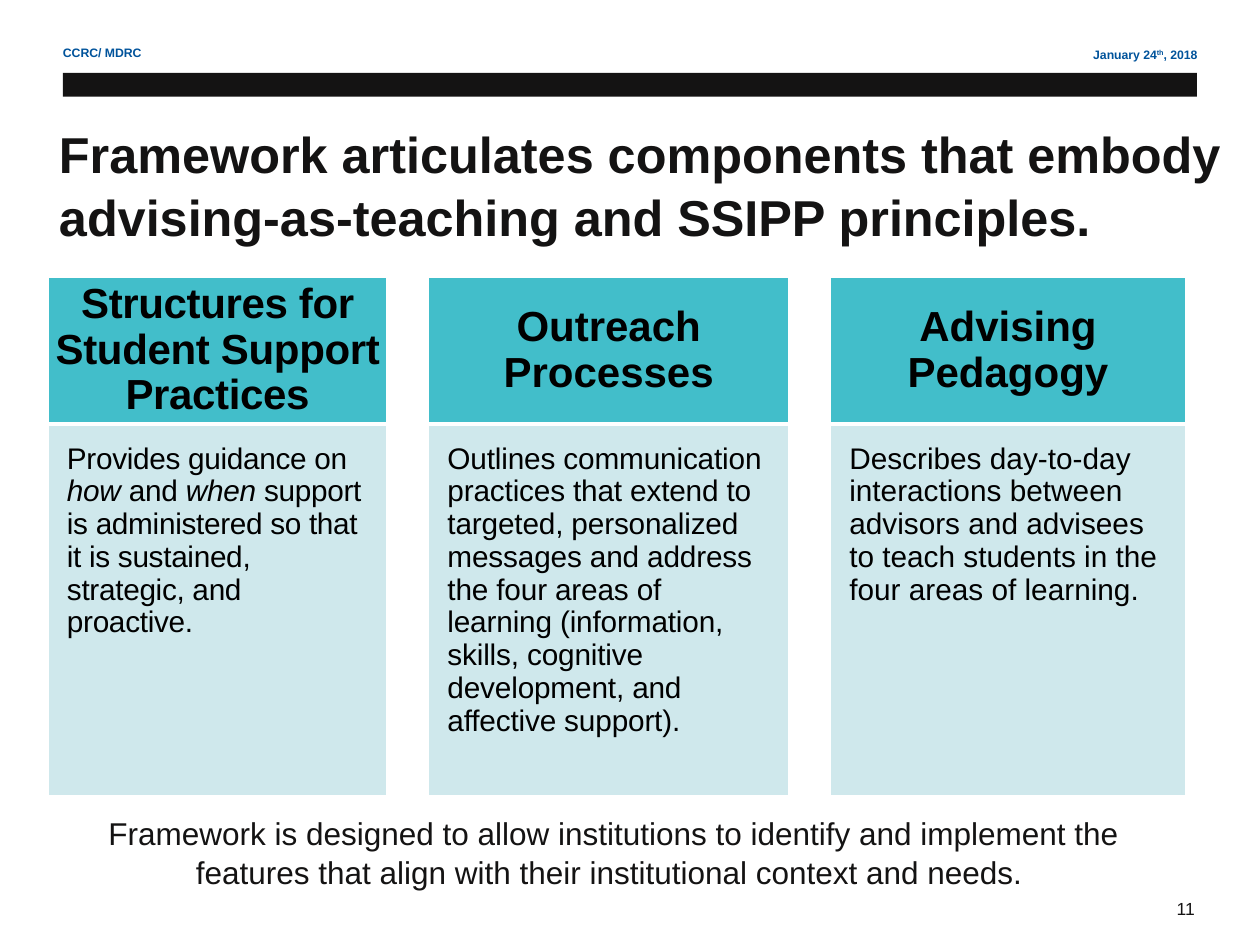
import pptx
import pptx.util
import pptx.dml.color
import pptx.enum.shapes
import pptx.enum.text
import pptx.oxml
import pptx.oxml.ns

Cm, Pt = pptx.util.Cm, pptx.util.Pt
ALIGN = pptx.enum.text.PP_ALIGN
ANCHOR = pptx.enum.text.MSO_ANCHOR

INK, BLUE, TEAL, PALE, WHITE, BLACK = (
    "141313", "00539B", "42BECA", "CFE8EC", "FFFFFF", "000000")

# Content: a run is (text, run properties)
ITALIC = {"i": "1"}
TEXTS = [  # runs, box in cm, size, colour, bold, alignment, anchor, line spacing
    ([("CCRC/ MDRC", {})],
     (1.02, 0.79, 9.04, 0.56), 7, BLUE, True, ALIGN.LEFT, ANCHOR.TOP, 1),
    ([("January 24", {}), ("th", {"baseline": "30000"}), (", 2018", {})],
     (16.31, 0.82, 8.08, 0.56), 7, BLUE, True, ALIGN.RIGHT, ANCHOR.TOP, 1),
    ([("Framework articulates components that embody "
       "advising-as-teaching and SSIPP principles.", {})],
     (0.94, 2.11, 24.26, 3.18), 28.8, INK, True, ALIGN.LEFT, ANCHOR.MIDDLE, 1.04),
    ([("Framework is designed to allow institutions to identify and implement "
       "the features that align with their institutional context and needs. ", {})],
     (0.94, 16.28, 22.86, 1.78), 18, INK, False, ALIGN.CENTER, ANCHOR.TOP, 1.02),
    ([("11", {})],
     (23.47, 17.98, 1.17, 0.69), 10, INK, False, ALIGN.LEFT, ANCHOR.TOP, 1),
]
COMPONENTS = [  # heading, its spacing, description runs, their spacing
    ("Structures for Student Support Practices", -20,
     [("Provides guidance on ", {}), ("how", ITALIC), (" and ", {}),
      ("when", ITALIC),
      (" support is administered so that it is sustained, strategic, "
       "and proactive.", {})], -20),
    ("Outreach Processes", 0,
     [("Outlines communication practices that extend to targeted, personalized "
       "messages and address the four areas of learning (information, skills, "
       "cognitive development, and affective support).", {})], -10),
    ("Advising Pedagogy", 0,
     [("Describes day-to-day interactions between advisors and advisees to "
       "teach students in the four areas of learning.", {})], 0),
]
COL_WIDTHS = [6.83, 0.84, 7.26, 0.84, 7.16]
ROW_HEIGHTS = [2.81, 7.5]


def rgb(value):
    return pptx.dml.color.RGBColor.from_string(value)


def write(tf, runs, size, color, bold, align, spacing, spc=0):
    p = tf.paragraphs[0]
    p.alignment, p.line_spacing = align, spacing
    f = p.font
    f.name, f.size, f.bold = "Arial", Pt(size), bold
    f.color.rgb = rgb(color)
    for text, props in runs:
        r = p.add_run()
        r.text = text
        rPr = r._r.get_or_add_rPr()
        for key, value in props.items():
            rPr.set(key, value)
        if spc:
            rPr.set("spc", str(spc))


def set_borders(cell, bottom):
    tcPr = cell._tc.get_or_add_tcPr()
    for i, (side, width) in enumerate(zip("LRTB", (1, 1, 1, bottom))):
        tcPr.insert(i, pptx.oxml.parse_xml(
            f'<a:ln{side} {pptx.oxml.ns.nsdecls("a")} w="{Pt(width)}">'
            f'<a:solidFill><a:srgbClr val="{WHITE}"/></a:solidFill></a:ln{side}>'))


def style_cell(cell, margin, anchor, fill):
    cell.margin_left = cell.margin_right = Cm(margin)
    cell.margin_top = cell.margin_bottom = Cm(margin)
    cell.vertical_anchor = anchor
    cell.fill.solid()
    cell.fill.fore_color.rgb = rgb(fill)


prs = pptx.Presentation()
prs.slide_width, prs.slide_height = Cm(25.4), Cm(19.05)
s = prs.slides.add_slide(prs.slide_layouts[6])

# Header bar
sp = s.shapes.add_shape(pptx.enum.shapes.MSO_SHAPE.RECTANGLE,
                        Cm(1.27), Cm(1.47), Cm(22.86), Cm(0.48))
sp.shadow.inherit = False
sp.fill.solid()
sp.fill.fore_color.rgb = rgb(INK)
sp.line.fill.background()

# Header, title, closing line and page number
for runs, box, size, color, bold, align, anchor, spacing in TEXTS:
    tf = s.shapes.add_textbox(*map(Cm, box)).text_frame
    tf.word_wrap = True
    tf.vertical_anchor = anchor
    write(tf, runs, size, color, bold, align, spacing)

# Component table, with narrow empty columns as gaps
table = s.shapes.add_table(
    len(ROW_HEIGHTS), len(COL_WIDTHS), Cm(0.97), Cm(5.59),
    Cm(sum(COL_WIDTHS)), Cm(sum(ROW_HEIGHTS))).table
table.first_row = table.horz_banding = False
for col, width in zip(table.columns, COL_WIDTHS):
    col.width = Cm(width)
for row, height in zip(table.rows, ROW_HEIGHTS):
    row.height = Cm(height)
for i, row in enumerate(table.rows):
    for cell in row.cells:
        cell.fill.background()
        set_borders(cell, bottom=1 if i else 3)

for i, (heading, head_spc, runs, body_spc) in enumerate(COMPONENTS):
    head, body = table.cell(0, 2 * i), table.cell(1, 2 * i)
    style_cell(head, 0, ANCHOR.MIDDLE, TEAL)
    write(head.text_frame, [(heading, {})], 24, BLACK, True,
          ALIGN.CENTER, 0.97, head_spc)
    style_cell(body, 0.38, ANCHOR.TOP, PALE)
    write(body.text_frame, runs, 17, BLACK, False, ALIGN.LEFT, 0.98, body_spc)

prs.save("out.pptx")
